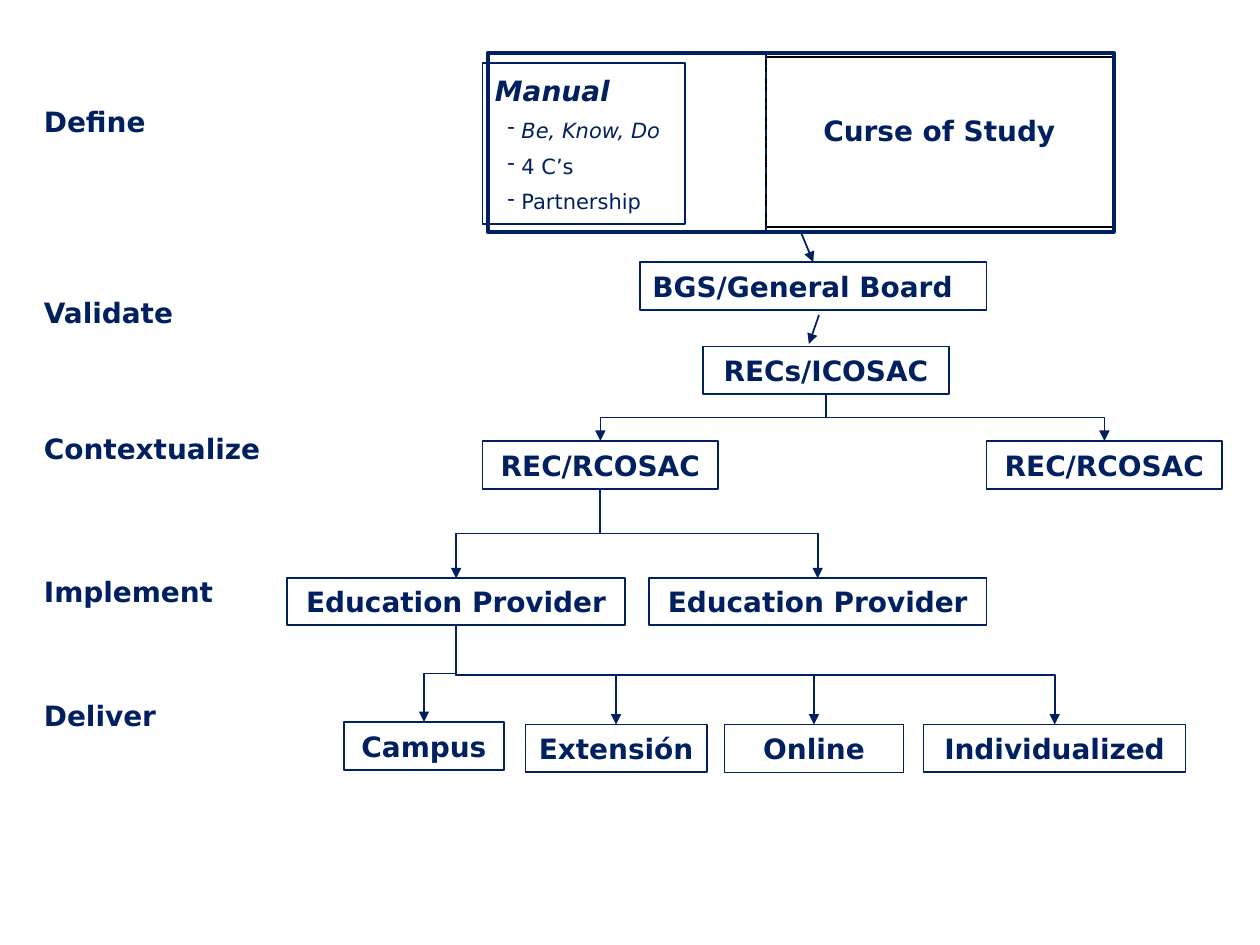
from lxml import etree
from pptx import Presentation
from pptx.dml.color import RGBColor
from pptx.enum import dml, shapes, text
from pptx.oxml.ns import qn
from pptx.util import Inches, Pt

NAVY = RGBColor(0x00, 0x20, 0x60)
BLACK = RGBColor(0, 0, 0)
FONT = "DejaVu Sans"
TOP, BOTTOM = 0, 2  # connection sites of a rectangle

STAGES = [("Define", 0.96), ("Validate", 2.48), ("Contextualize", 3.56),
          ("Implement", 4.69), ("Deliver", 5.68)]
PRINCIPLES = ["Be, Know, Do", "4 C’s", "Partnership"]


def style_text(paragraph, size=16, bold=True, italic=False):
    for run in paragraph.runs:
        font = run.font
        font.name, font.size = FONT, Pt(size)
        font.bold, font.italic = bold, italic
        font.color.rgb = NAVY


def add_box(slide, label, left, top, width, height=0.38, line=1, color=NAVY,
            align=text.PP_ALIGN.CENTER):
    box = slide.shapes.add_shape(shapes.MSO_SHAPE.RECTANGLE, Inches(left), Inches(top),
                                 Inches(width), Inches(height))
    box.shadow.inherit = False
    box.fill.background()
    box.line.color.rgb = color
    box.line.width = Pt(line)
    frame = box.text_frame
    frame.word_wrap = True
    frame.vertical_anchor = text.MSO_ANCHOR.MIDDLE
    frame.text = label
    frame.paragraphs[0].alignment = align
    style_text(frame.paragraphs[0])
    return box


def add_stage(slide, label, middle):
    height = 0.38
    box = slide.shapes.add_textbox(Inches(0.25), Inches(middle - height / 2),
                                   Inches(2.11), Inches(height))
    frame = box.text_frame
    frame.word_wrap = True
    frame.vertical_anchor = text.MSO_ANCHOR.MIDDLE
    frame.text = label
    style_text(frame.paragraphs[0])


def add_dash_item(frame, label):
    item = frame.add_paragraph()
    item.text = label
    properties = item._p.get_or_add_pPr()
    properties.set("marL", str(Inches(0.21)))
    properties.set("indent", str(-Inches(0.11)))
    etree.SubElement(properties, qn("a:buChar")).set("char", "-")
    item.alignment = text.PP_ALIGN.LEFT
    item.space_before = Pt(6)
    style_text(item, size=12, bold=False, italic=label == PRINCIPLES[0])


def add_line(slide, start=(0, 0), end=(0, 0), kind=shapes.MSO_CONNECTOR.STRAIGHT,
             width=1, arrow=True):
    points = [Inches(value) for value in (*start, *end)]
    line = slide.shapes.add_connector(kind, *points)
    line.line.color.rgb = NAVY
    line.line.width = Pt(width)
    if arrow:
        etree.SubElement(line.line._get_or_add_ln(), qn("a:tailEnd")).set("type", "triangle")
    etree.SubElement(line._element.spPr, qn("a:effectLst"))
    return line


def join(line, upper, lower):
    line.begin_connect(upper, BOTTOM)
    line.end_connect(lower, TOP)


def add_branch(slide, parent, child, width=1):
    """Elbow that leaves the parent downwards: a turned horizontal elbow."""
    elbow = add_line(slide, kind=shapes.MSO_CONNECTOR.ELBOW, width=width)
    join(elbow, parent, child)
    x1, y1 = parent.left + parent.width // 2, parent.top + parent.height
    x2, y2 = child.left + child.width // 2, child.top
    drop, shift = y2 - y1, abs(x2 - x1)
    elbow.left, elbow.top = (x1 + x2 - drop) // 2, (y1 + y2 - shift) // 2
    elbow.width, elbow.height = drop, shift
    frame = elbow._element.spPr.find(qn("a:xfrm"))
    to_right = x2 > x1
    frame.set("rot", str((270 if to_right else 90) * 60000))
    frame.set("flipH", "1" if to_right else "0")
    frame.set("flipV", "0")


def add_definition(slide):
    manual = add_box(slide, "Manual", 3.83, 0.5, 1.61, 1.28, align=text.PP_ALIGN.LEFT)
    style_text(manual.text_frame.paragraphs[0], italic=True)
    for principle in PRINCIPLES:
        add_dash_item(manual.text_frame, principle)
    study = add_box(slide, "Curse of Study", 6.08, 0.45, 2.75, 1.35, color=BLACK)
    study.text_frame.margin_bottom = Inches(0.23)
    outline = add_box(slide, "", 3.87, 0.42, 4.97, 1.42, line=2.25)
    divider = add_line(slide, (6.08, 0.42), (6.08, 1.83), arrow=False)
    divider.line.dash_style = dml.MSO_LINE.DASH_DOT
    return outline


def main():
    deck = Presentation()
    deck.slide_width, deck.slide_height = Inches(10), Inches(7.5)
    slide = deck.slides.add_slide(deck.slide_layouts[6])

    for stage, middle in STAGES:
        add_stage(slide, stage, middle)

    definition = add_definition(slide)
    board = add_box(slide, "BGS/General Board", 5.08, 2.08, 2.75, align=text.PP_ALIGN.LEFT)
    council = add_box(slide, "RECs/ICOSAC", 5.58, 2.75, 1.95)
    regions = [add_box(slide, "REC/RCOSAC", left, 3.5, 1.87) for left in (3.83, 7.83)]
    providers = [add_box(slide, "Education Provider", left, 4.59, 2.68, 0.37)
                 for left in (2.28, 5.15)]
    campus = add_box(slide, "Campus", 2.73, 5.73, 1.27)
    extension = add_box(slide, "Extensión", 4.17, 5.75, 1.44)
    online = add_box(slide, "Online", 5.75, 5.75, 1.42, line=0.75)
    individual = add_box(slide, "Individualized", 7.33, 5.75, 2.08)

    join(add_line(slide), definition, board)
    add_line(slide, (6.5, 2.5), (6.42, 2.73))
    for parent, children in ((council, regions), (regions[0], providers),
                             (providers[0], (campus, extension, individual))):
        for child in children:
            add_branch(slide, parent, child)
    add_branch(slide, providers[0], online, width=0.75)

    deck.save("out.pptx")


if __name__ == "__main__":
    main()
